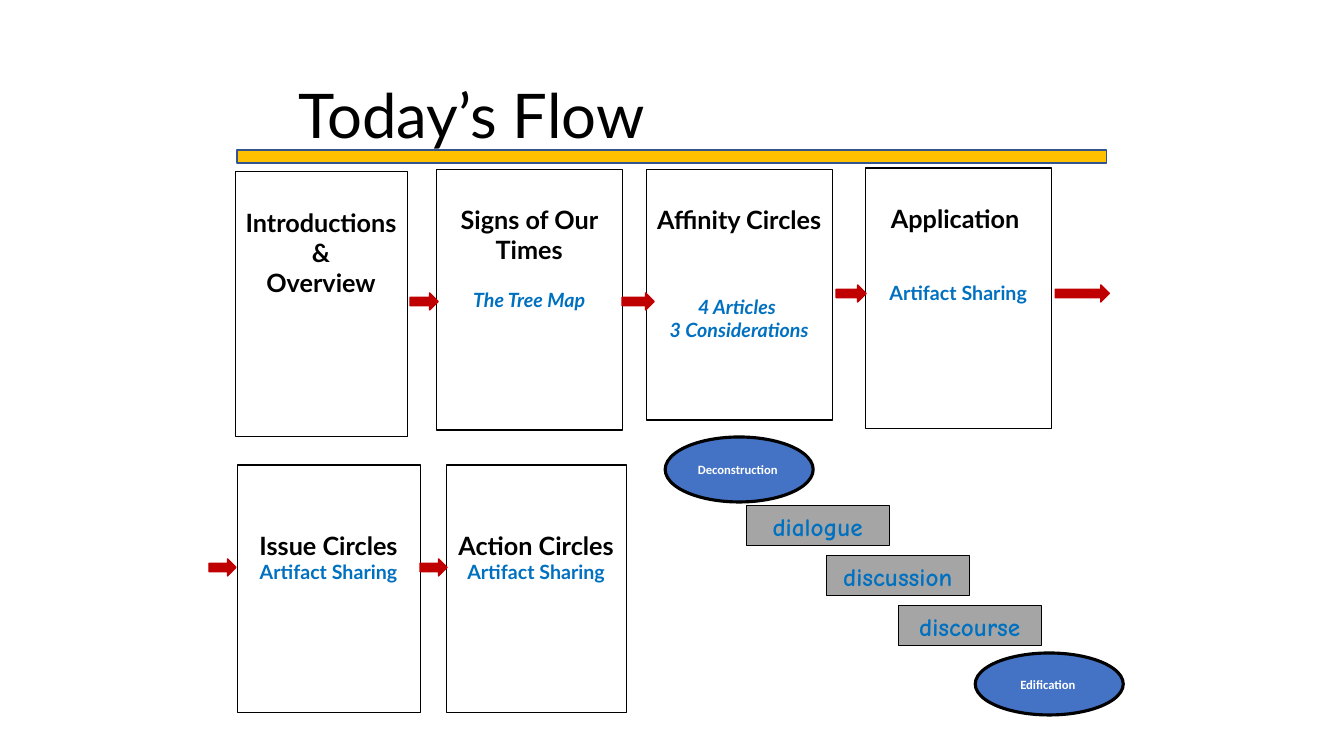
from pptx import Presentation
from pptx.dml.color import RGBColor
from pptx.enum.shapes import MSO_SHAPE
from pptx.enum.text import MSO_ANCHOR, PP_ALIGN
from pptx.util import Emu, Inches, Pt

PX = Inches(1) / 100.8
BLACK, BLUE, RED, GRAY = "000000", "0070C0", "C00000", "A5A5A5"

# Content: box in px, top inset, headings, gap in points, details, italic details
TITLE = "Today’s Flow"
CARDS = [
    ((235, 172, 172, 265), 35, ["Introductions", "&", "Overview"], 0, [], False),
    ((436, 169, 186, 261), 35, ["Signs of Our Times"], 17, ["The Tree Map"], True),
    ((646, 169, 186, 251), 35, ["Affinity Circles"], 43,
     ["4 Articles ", "3 Considerations"], True),
    ((865, 168, 186, 261), 35, ["Application "], 34, ["Artifact Sharing"], False),
    ((237, 465, 183, 248), 65, ["Issue Circles"], 0, ["Artifact Sharing"], False),
    ((446, 465, 180, 248), 65, ["Action Circles"], 0, ["Artifact Sharing"], False),
]
ARROWS = [(410, 293, 28), (622, 293, 32), (836, 285, 30),
          (1055, 285, 54), (209, 559, 27), (420, 559, 27)]
ARROW_HEIGHT = 17
STEPS = [("dialogue", 746, 506), ("discussion", 826, 556), ("discourse", 898, 606)]
STEP_SIZE = (143, 40)
OVALS = [("Deconstruction ", (665, 437, 148, 65)),
         ("Edification ", (975, 653, 148, 62))]


def px(value):
    return Emu(round(value * PX))


def color(value):
    return RGBColor.from_string(value)


def add_box(slide, kind, box, fill=None, line=BLACK, width=0.75):
    shape = slide.shapes.add_shape(kind, *map(px, box))
    shape.shadow.inherit = False
    if fill:
        shape.fill.solid()
        shape.fill.fore_color.rgb = color(fill)
    else:
        shape.fill.background()
    shape.line.color.rgb = color(line)
    shape.line.width = Pt(width)
    return shape


def set_frame(shape, anchor=MSO_ANCHOR.TOP, top=5, side=10):
    frame = shape.text_frame
    frame.word_wrap = True
    frame.vertical_anchor = anchor
    frame.margin_top, frame.margin_bottom = px(top), px(5)
    frame.margin_left = frame.margin_right = px(side)
    return frame


def write(frame, text, size=18, font="Lato", ink=BLACK, bold=True, italic=False,
          before=0, spacing=None):
    paragraph = frame.paragraphs[0]
    if paragraph.runs:
        paragraph = frame.add_paragraph()
    paragraph.alignment = PP_ALIGN.CENTER
    paragraph.space_before = Pt(before)
    paragraph.line_spacing = spacing
    run = paragraph.add_run()
    run.text = text
    run.font.name, run.font.size = font, Pt(size)
    run.font.bold, run.font.italic = bold, italic
    run.font.color.rgb = color(ink)


def main():
    presentation = Presentation()
    presentation.slide_width, presentation.slide_height = Inches(13.33), Inches(7.5)
    slide = presentation.slides.add_slide(presentation.slide_layouts[5])

    # Title
    title = slide.shapes.title
    title.left, title.top, title.width, title.height = map(px, (266, 46, 411, 146))
    write(set_frame(title, MSO_ANCHOR.MIDDLE), TITLE, size=44, bold=False, spacing=0.9)

    # Agenda cards
    for box, top, headings, gap, details, italic in CARDS:
        frame = set_frame(add_box(slide, MSO_SHAPE.RECTANGLE, box), top=top, side=5)
        for heading in headings:
            write(frame, heading)
        for index, detail in enumerate(details):
            write(frame, detail, size=14, ink=BLUE, italic=italic,
                  before=0 if index else gap)

    # Flow arrows
    for left, top, width in ARROWS:
        add_box(slide, MSO_SHAPE.RIGHT_ARROW, (left, top, width, ARROW_HEIGHT),
                fill=RED, line=RED, width=1)

    # Rule under the title
    add_box(slide, MSO_SHAPE.RECTANGLE, (237, 150, 869, 13),
            fill="FFC000", line="325491", width=1)

    # Staircase of conversation steps
    for text, left, top in STEPS:
        step = add_box(slide, MSO_SHAPE.RECTANGLE, (left, top, *STEP_SIZE), fill=GRAY)
        write(set_frame(step), text, font="Comic Neue", ink=BLUE)

    # Start and end of the staircase
    for text, box in OVALS:
        oval = add_box(slide, MSO_SHAPE.OVAL, box, fill="4472C4", width=2.25)
        write(set_frame(oval, MSO_ANCHOR.MIDDLE), text, size=9, font="Calibri",
              ink="FFFFFF")

    presentation.save("out.pptx")


if __name__ == "__main__":
    main()
